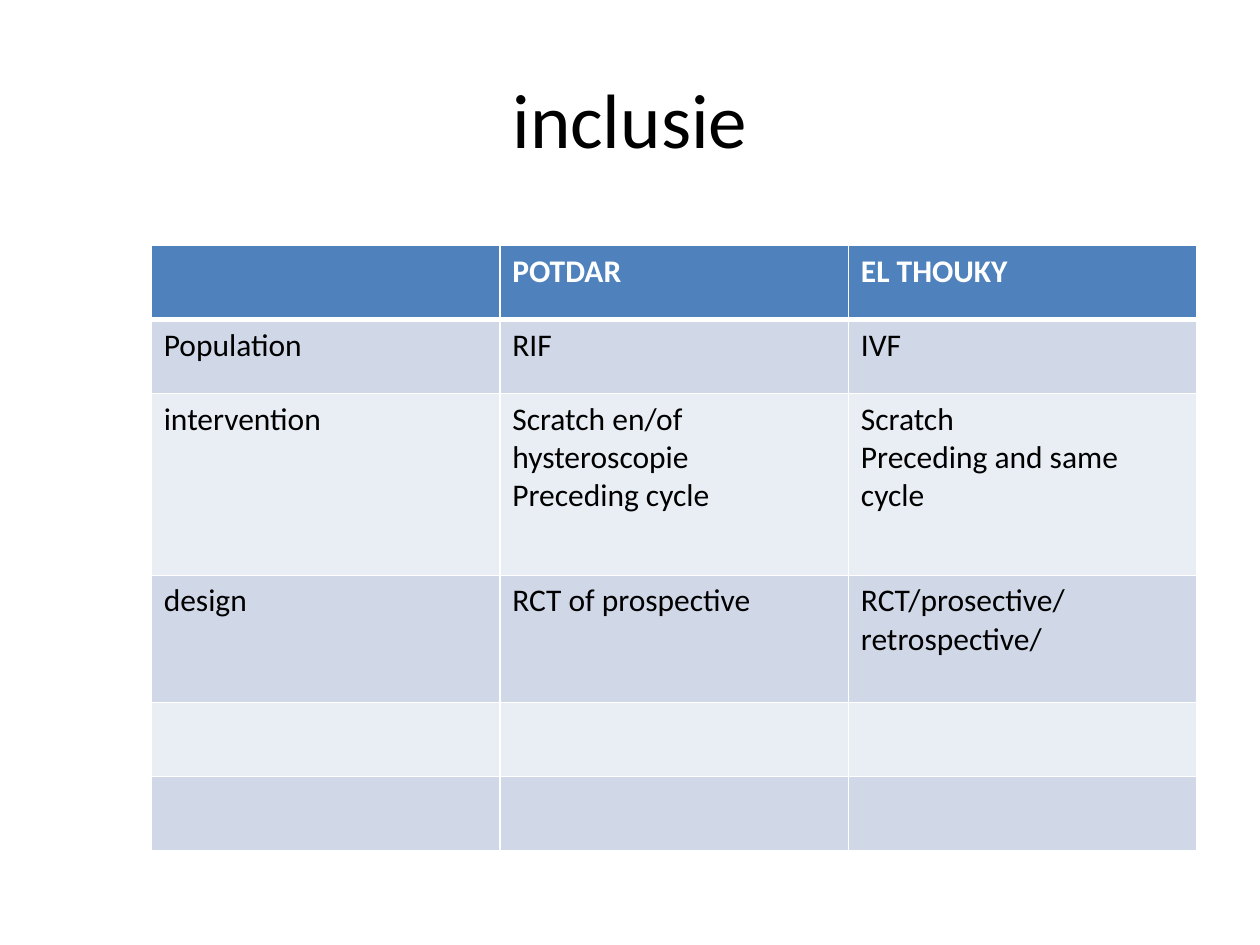
from lxml.etree import SubElement
from pptx import Presentation
from pptx.dml.color import RGBColor
from pptx.enum.text import MSO_ANCHOR, PP_ALIGN
from pptx.oxml.ns import qn
from pptx.util import Inches, Pt

BLACK = RGBColor(0x00, 0x00, 0x00)
WHITE = RGBColor(0xFF, 0xFF, 0xFF)
HEADER_BLUE = RGBColor(0x4F, 0x81, 0xBD)
BAND_DARK = RGBColor(0xD0, 0xD8, 0xE8)
BAND_LIGHT = RGBColor(0xE9, 0xED, 0xF4)

SLIDE_WIDTH, SLIDE_HEIGHT = Inches(10), Inches(7.5)
TITLE_BOX = (0.05, 0.04, 0.9, 0.17)
TABLE_BOX = (0.12, 0.26, 0.83, 0.64)
ROW_SHARES = (0.59, 0.59, 1.45, 1.01, 0.59, 0.59)
COMPARISON = (
    ("", "POTDAR", "EL THOUKY"),
    ("Population", "RIF", "IVF"),
    (
        "intervention",
        "Scratch en/of hysteroscopie\nPreceding cycle",
        "Scratch\nPreceding and same cycle",
    ),
    ("design", "RCT of prospective", "RCT/prosective/retrospective/"),
    ("", "", ""),
    ("", "", ""),
)


def share_box(left, top, width, height):
    """Turn shares of the slide into a box in EMU."""
    return (
        round(left * SLIDE_WIDTH),
        round(top * SLIDE_HEIGHT),
        round(width * SLIDE_WIDTH),
        round(height * SLIDE_HEIGHT),
    )


def write_text(frame, text, size=18, color=BLACK, bold=False, align=PP_ALIGN.LEFT):
    """Write one paragraph per line of text with the given format."""
    frame.text = text
    for paragraph in frame.paragraphs:
        paragraph.alignment = align
        font = paragraph.font
        font.name, font.size, font.bold = "Calibri", Pt(size), bold
        font.color.rgb = color
        for run in paragraph.runs:
            run.font.size, run.font.bold = Pt(size), bold
            run.font.name = "Calibri"
            run.font.color.rgb = color


def set_borders(cell, **widths):
    """Draw white cell borders with the given widths in points."""
    properties = cell._tc.get_or_add_tcPr()
    for side in "LRTB":
        line = SubElement(properties, qn(f"a:ln{side}"), w=str(Pt(widths.get(side, 1))))
        fill = SubElement(line, qn("a:solidFill"))
        SubElement(fill, qn("a:srgbClr"), val=str(WHITE))


def place_title(slide, box, text):
    """Place the centred slide title in its box."""
    title = slide.shapes.title
    title.left, title.top, title.width, title.height = box
    title.text_frame.vertical_anchor = MSO_ANCHOR.MIDDLE
    write_text(title.text_frame, text, size=44, align=PP_ALIGN.CENTER)


def place_comparison(slide, box, rows):
    """Place the banded study comparison table in its box."""
    table = slide.shapes.add_table(len(rows), len(rows[0]), *box).table
    for row, share in zip(table.rows, ROW_SHARES):
        row.height = round(box[3] * share / sum(ROW_SHARES))
    for row_index, texts in enumerate(rows):
        header = row_index == 0
        band = HEADER_BLUE if header else (BAND_LIGHT, BAND_DARK)[row_index % 2]
        for column_index, text in enumerate(texts):
            cell = table.cell(row_index, column_index)
            write_text(cell.text_frame, text, color=WHITE if header else BLACK, bold=header)
            set_borders(cell, T=3 if row_index == 1 else 1, B=3 if header else 1)
            cell.fill.solid()
            cell.fill.fore_color.rgb = band


def main():
    """Build and save the slide."""
    deck = Presentation()
    deck.slide_width, deck.slide_height = SLIDE_WIDTH, SLIDE_HEIGHT
    slide = deck.slides.add_slide(deck.slide_layouts[5])
    place_title(slide, share_box(*TITLE_BOX), "inclusie")
    place_comparison(slide, share_box(*TABLE_BOX), COMPARISON)
    deck.save("out.pptx")


if __name__ == "__main__":
    main()
